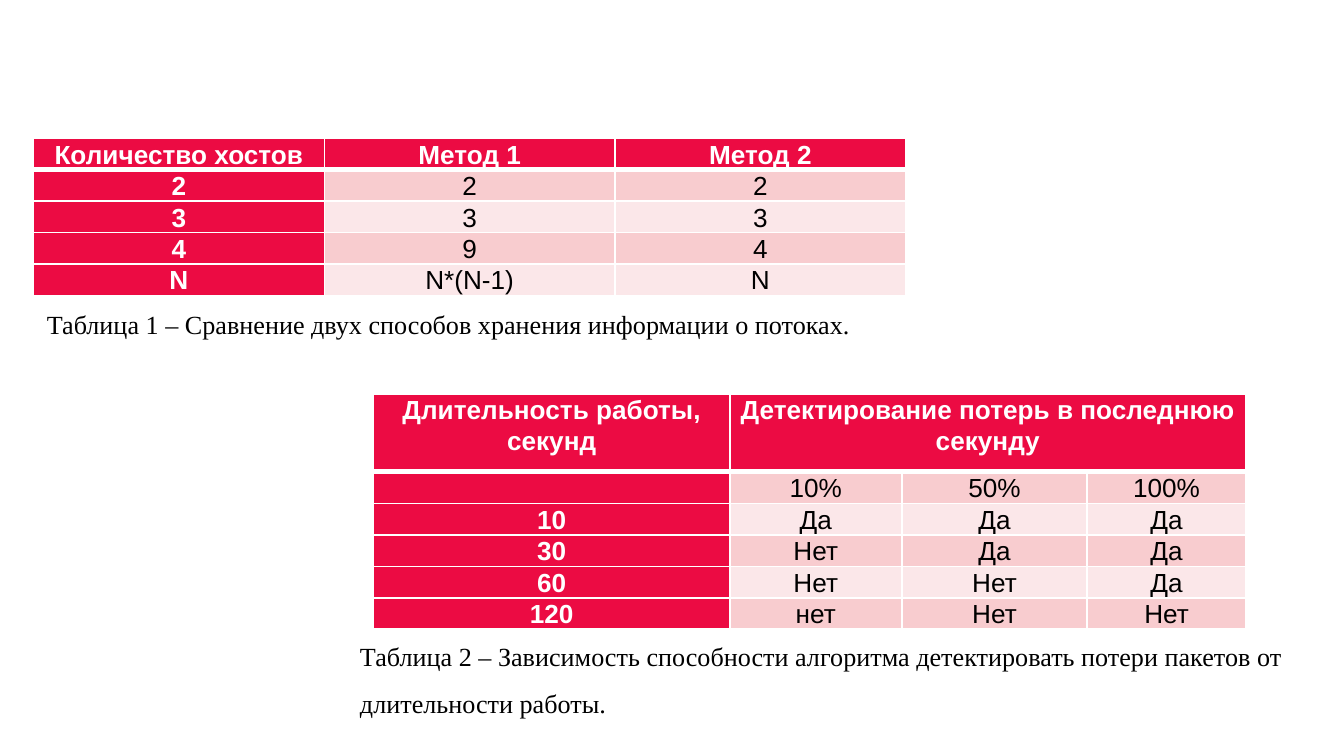
from dataclasses import dataclass

from lxml import etree
from pptx import Presentation
from pptx import util as u
from pptx.dml.color import RGBColor
from pptx.enum import text
from pptx.oxml import ns


@dataclass(frozen=True)
class Theme:
    accent: str = "EC0B43"
    bands: tuple = ("F8CCCF", "FBE7E9")
    light: str = "FFFFFF"
    dark: str = "000000"
    table_font: str = "Arial"
    caption_font: str = "Times New Roman"
    size: int = 14
    border: int = 1
    header_border: int = 3


class SlideBuilder:
    def __init__(self, slide, theme):
        self.slide = slide
        self.theme = theme

    def style(self, paragraph, font_name, color, bold=False):
        for run in paragraph.runs:
            run.font.name = font_name
            run.font.size = u.Pt(self.theme.size)
            run.font.bold = bold
            run.font.color.rgb = RGBColor.from_string(color)

    def borders(self, cell, bottom):
        properties = cell._tc.get_or_add_tcPr()
        widths = dict.fromkeys(("lnL", "lnR", "lnT"), self.theme.border)
        for side, width in {**widths, "lnB": bottom}.items():
            line = etree.SubElement(properties, ns.qn(f"a:{side}"), w=str(u.Pt(width)))
            fill = etree.SubElement(line, ns.qn("a:solidFill"))
            etree.SubElement(fill, ns.qn("a:srgbClr"), val=self.theme.light)

    def cell(self, cell, content, row, column):
        theme = self.theme
        heading = row == 0 or column == 0
        self.borders(cell, theme.header_border if row == 0 else theme.border)
        cell.fill.solid()
        fill = theme.accent if heading else theme.bands[(row - 1) % 2]
        cell.fill.fore_color.rgb = RGBColor.from_string(fill)
        cell.margin_left = cell.margin_right = u.Inches(0.07)
        cell.margin_top = cell.margin_bottom = 0
        cell.text_frame.text = content
        paragraph = cell.text_frame.paragraphs[0]
        paragraph.alignment = text.PP_ALIGN.CENTER
        paragraph.line_spacing = 1.07
        self.style(paragraph, theme.table_font,
                   theme.light if heading else theme.dark, heading)
        etree.SubElement(paragraph._p, ns.qn("a:endParaRPr"), sz=str(theme.size * 100))

    def table(self, left, top, widths, heights, rows):
        grid = self.slide.shapes.add_table(
            len(rows), len(widths), u.Inches(left), u.Inches(top),
            u.Inches(sum(widths)), u.Inches(sum(heights))).table
        for column, width in zip(grid.columns, widths):
            column.width = u.Inches(width)
        for row, height in zip(grid.rows, heights):
            row.height = u.Inches(height)
        for r, contents in enumerate(rows):
            for c, content in enumerate(contents):
                self.cell(grid.cell(r, c), content, r, c)
        return grid

    def caption(self, left, top, width, height, content):
        frame = self.slide.shapes.add_textbox(
            u.Inches(left), u.Inches(top), u.Inches(width), u.Inches(height)).text_frame
        frame.word_wrap = True
        frame.auto_size = text.MSO_AUTO_SIZE.SHAPE_TO_FIT_TEXT
        frame.text = content
        paragraph = frame.paragraphs[0]
        paragraph.line_spacing = 1.5
        paragraph.space_after = u.Pt(8)
        self.style(paragraph, self.theme.caption_font, self.theme.dark)


def main():
    presentation = Presentation()
    presentation.slide_width = u.Inches(10)
    presentation.slide_height = u.Inches(10 * 9 / 16)
    slide = presentation.slides.add_slide(presentation.slide_layouts[6])
    builder = SlideBuilder(slide, Theme())
    table_width = 6.49
    row_height = 0.23

    storage_rows = [
        ("Количество хостов", "Метод 1", "Метод 2"),
        ("2", "2", "2"),
        ("3", "3", "3"),
        ("4", "9", "4"),
        ("N", "N*(N-1)", "N"),
    ]
    builder.table(0.25, 1.03, [table_width / 3] * 3, [row_height] * 5, storage_rows)

    detection_rows = [
        ("Длительность работы, секунд", "Детектирование потерь в последнюю секунду", "", ""),
        ("", "10%", "50%", "100%"),
        ("10", "Да", "Да", "Да"),
        ("30", "Нет", "Да", "Да"),
        ("60", "Нет", "Нет", "Да"),
        ("120", "нет", "Нет", "Нет"),
    ]
    detection = builder.table(2.78, 2.93, [2.65, 1.28, 1.38, 1.18],
                              [0.58] + [row_height] * 5, detection_rows)
    detection.cell(0, 1).merge(detection.cell(0, 3))

    builder.caption(2.58, 4.6, 8.08, 0.77,
                    "Таблица 2 – Зависимость способности алгоритма детектировать "
                    "потери пакетов от длительности работы.")
    builder.caption(0.25, 2.13, 6.79, 0.42,
                    "Таблица 1 – Сравнение двух способов хранения информации о потоках.")
    presentation.save("out.pptx")


if __name__ == "__main__":
    main()
